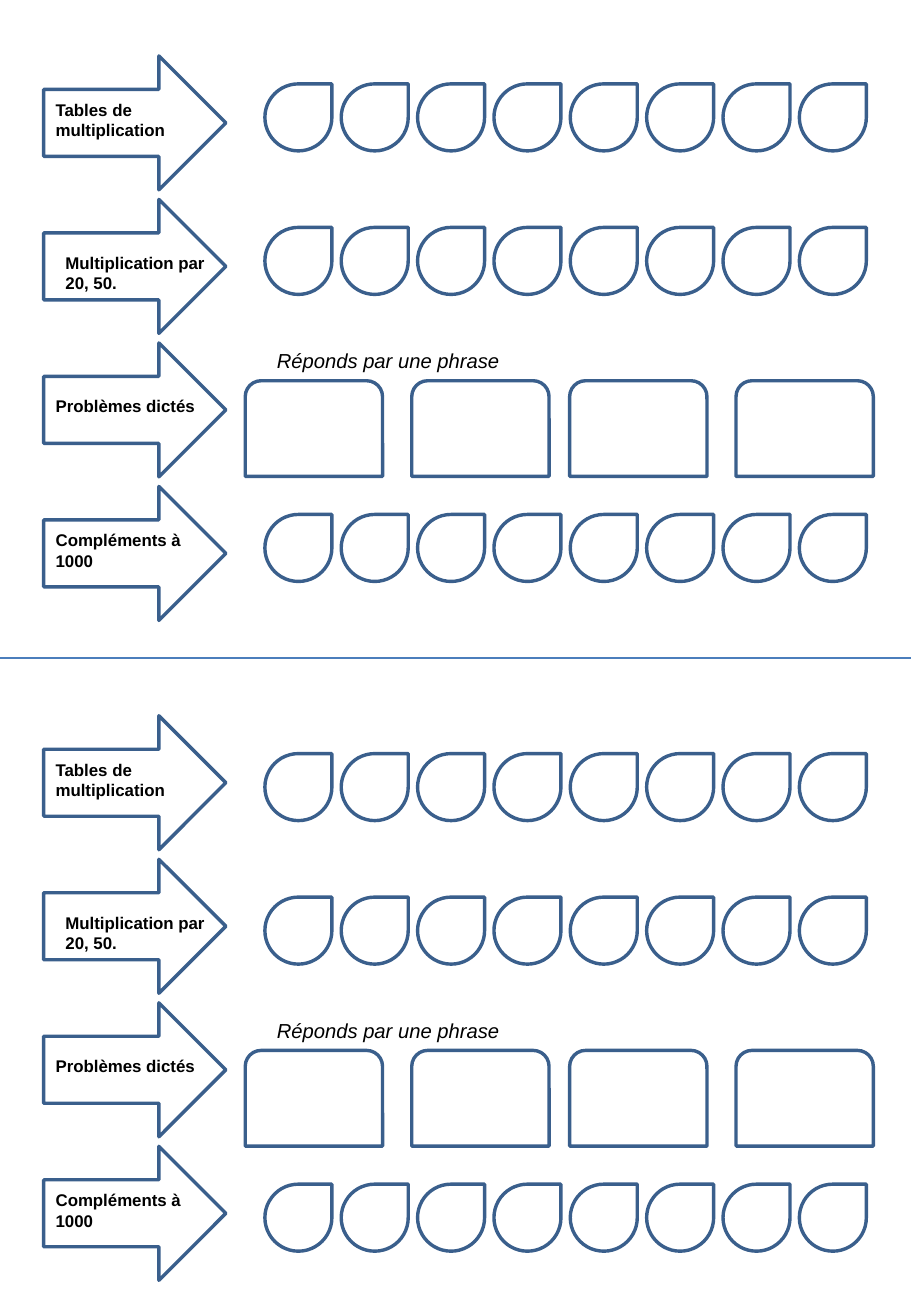
from lxml.etree import SubElement
from pptx import Presentation
from pptx.dml.color import RGBColor
from pptx.enum.shapes import MSO_CONNECTOR as Link, MSO_SHAPE as Shape
from pptx.oxml.ns import qn
from pptx.util import Pt

NAVY = RGBColor(0x3A, 0x5F, 0x8C)
BLUE = RGBColor(0x4B, 0x7E, 0xBC)
BLACK = RGBColor(0, 0, 0)

WIDTH, HEIGHT = 540, 779.76
ARROW_X, ARROW_Y = 25.9, 33.1
DROP_X, DROP_Y = 157, 49.7
ROW_STEP, DROP_STEP = 85.04, 45.26
HALF_ARROW, HALF_DROP = 391, 396.8  # shifts down to the lower half
BOX_XS = (145.4, 244.1, 337.7, 436.3)

# text, left, top, width, height
LABELS = (
    ("Tables de multiplication", 25.9, 55.4, 108, 31.7),
    ("Multiplication par 20, 50.", 31.7, 146.2, 102.2, 31.7),
    ("Problèmes dictés", 25.9, 231.1, 108, 19.4),
    ("Compléments à 1000", 25.9, 310.5, 102.2, 43.9),
)
DROP_ROWS = (0, 1, 3)


def add_outline(slide, kind, x, y, w, h):
    shape = slide.shapes.add_shape(kind, Pt(x), Pt(y), Pt(w), Pt(h))
    shape.shadow.inherit = False
    shape.fill.background()
    shape.line.color.rgb = NAVY
    shape.line.width = Pt(2)


def add_text(slide, text, x, y, w, h, size=10, bold=False, italic=False):
    frame = slide.shapes.add_textbox(Pt(x), Pt(y), Pt(w), Pt(h)).text_frame
    frame.word_wrap = True
    run = frame.paragraphs[0].add_run()
    run.text = text
    font = run.font
    font.name, font.size = "Arial", Pt(size)
    font.bold, font.italic = bold, italic
    font.color.rgb = BLACK


def add_rule(slide, y):
    rule = slide.shapes.add_connector(Link.STRAIGHT, 0, Pt(y), Pt(WIDTH), Pt(y))
    rule.line.color.rgb = BLUE
    rule.line.width = Pt(0.75)
    SubElement(rule._element.spPr, qn("a:effectLst"))


def add_steps(slide, shift):
    """Draw the four arrows with their labels."""
    for row, (text, x, y, w, h) in enumerate(LABELS):
        top = ARROW_Y + row * ROW_STEP + shift
        add_outline(slide, Shape.RIGHT_ARROW, ARROW_X, top, 108, 79.4)
        add_text(slide, text, x, y + shift, w, h, bold=True)


def add_answers(slide, shift):
    """Draw the rows of drops and the row of answer boxes."""
    for row in DROP_ROWS:
        top = DROP_Y + row * ROW_STEP + shift
        for col in range(8):
            left = DROP_X + col * DROP_STEP
            add_outline(slide, Shape.TEAR, left, top, 39.7, 39.7)
    add_text(slide, "Réponds par une phrase", DROP_X, 203 + shift, 363, 21.6,
             size=12, italic=True)
    for left in BOX_XS:
        add_outline(slide, Shape.ROUND_2_SAME_RECTANGLE,
                    left, 225.6 + shift, 81.4, 56.7)


def main():
    deck = Presentation()
    deck.slide_width, deck.slide_height = Pt(WIDTH), Pt(HEIGHT)
    slide = deck.slides.add_slide(deck.slide_layouts[6])
    add_rule(slide, HEIGHT / 2)
    for shift in (0, HALF_ARROW):
        add_steps(slide, shift)
    for shift in (0, HALF_DROP):
        add_answers(slide, shift)
    deck.save("out.pptx")


if __name__ == "__main__":
    main()
